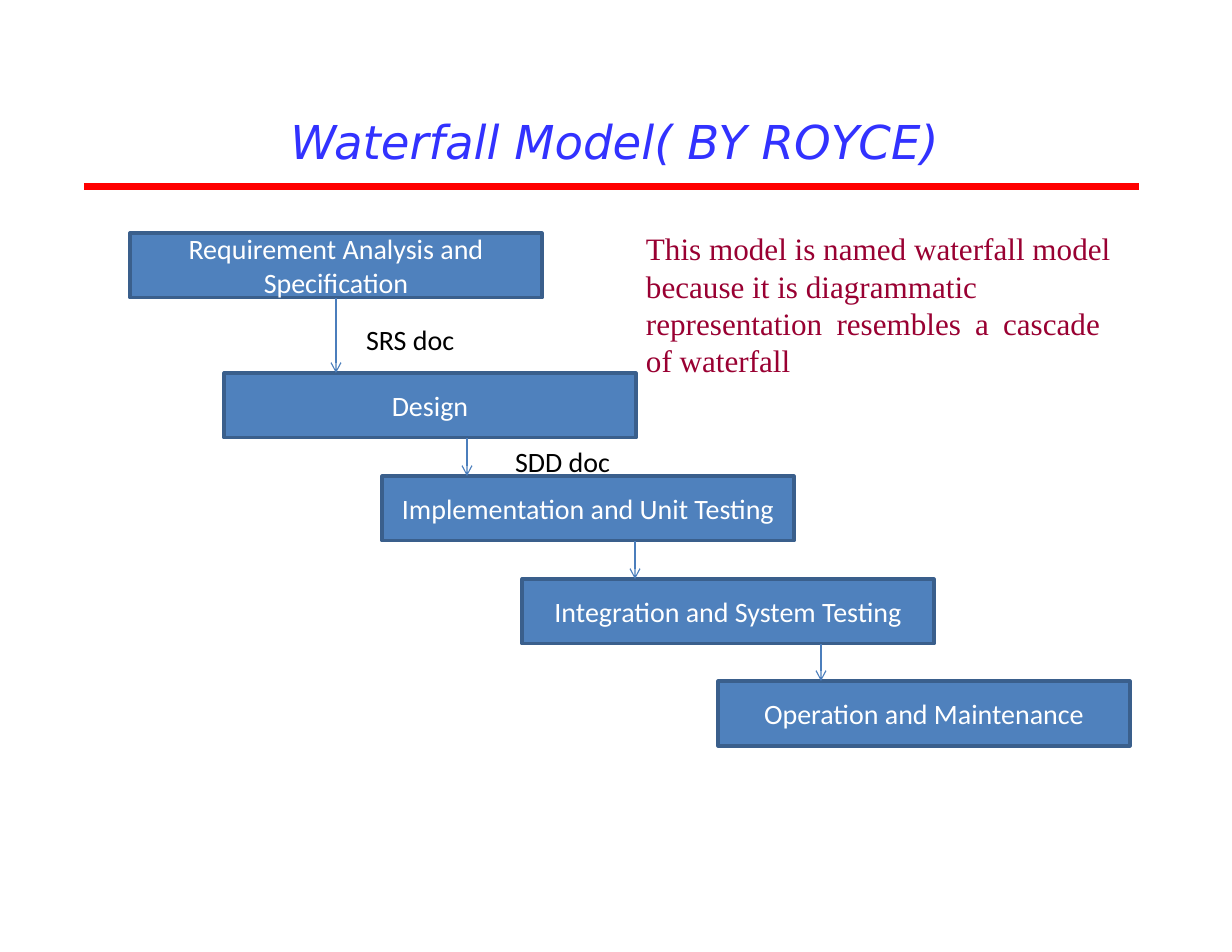
from lxml import etree
from pptx import Presentation, util as u
from pptx.dml.color import RGBColor
from pptx.enum import shapes, text
from pptx.oxml import ns

PX = 914400 // 112
COLORS = {"title": "3232FF", "rule": "FF0000", "box": "4F81BD", "edge": "3A5F8C",
          "arrow": "4B7EBC", "white": "FFFFFF", "black": "000000", "note": "990032"}
STAGE_WIDTH, STAGE_HEIGHT = 412, 65
STAGES = [("Requirement Analysis and Specification", 130, 233),
          ("Design", 224, 373),
          ("Implementation and Unit Testing", 382, 476),
          ("Integration and System Testing", 522, 579),
          ("Operation and Maintenance", 718, 681)]
ARROW_LEFTS = [336, 467, 635, 821]


def px(*lengths):
    return [u.Emu(length * PX) for length in lengths]


def color(name):
    return RGBColor.from_string(COLORS[name])


def format_span(span, size, font, name):
    span.font.size = u.Pt(size)
    span.font.name = font
    span.font.color.rgb = color(name)


def add_text(page, words, place, size, font, name):
    box = page.shapes.add_textbox(*px(*place))
    box.text_frame.word_wrap = True
    box.text_frame.text = words
    para = box.text_frame.paragraphs[0]
    format_span(para.runs[0], size, font, name)
    return box


def add_stage(page, words, left, top):
    box = page.shapes.add_shape(shapes.MSO_SHAPE.RECTANGLE,
                                *px(left, top, STAGE_WIDTH, STAGE_HEIGHT))
    box.shadow.inherit = False
    box.fill.solid()
    box.fill.fore_color.rgb = color("box")
    box.line.color.rgb = color("edge")
    box.line.width = u.Pt(2)
    frame = box.text_frame
    frame.word_wrap = True
    frame.vertical_anchor = text.MSO_ANCHOR.MIDDLE
    frame.text = words
    frame.paragraphs[0].alignment = text.PP_ALIGN.CENTER
    format_span(frame.paragraphs[0].runs[0], 18, "Calibri", "white")
    return box


def add_line(page, start, end, name, width, arrow=False):
    line = page.shapes.add_connector(shapes.MSO_CONNECTOR.STRAIGHT, *px(*start, *end))
    line.line.color.rgb = color(name)
    line.line.width = u.Pt(width)
    if arrow:
        etree.SubElement(line.line._get_or_add_ln(), ns.qn("a:tailEnd"), type="arrow")
    etree.SubElement(line._element.spPr, ns.qn("a:effectLst"))
    return line


def add_note(page):
    box = add_text(page, "This model is named waterfall model because it is "
                   "diagrammatic representation", (635, 224, 495, 196),
                   20, "Times New Roman", "note")
    para = box.text_frame.paragraphs[0]
    para.line_spacing = u.Pt(24)
    # The gaps between the words of the third line are widened
    for word in ("resembles", "a", "cascade"):
        for words, spacing in ((" ", 400), (word, 0)):
            span = para.add_run()
            span.text = words
            format_span(span, 20, "Times New Roman", "note")
            span.font._element.set("spc", str(spacing))
    para.add_line_break()
    span = para.add_run()
    span.text = "of waterfall"
    format_span(span, 20, "Times New Roman", "note")


def main():
    deck = Presentation()
    deck.slide_width, deck.slide_height = px(11 * 112, 952)
    page = deck.slides.add_slide(deck.slide_layouts[6])

    # Title and rule
    title = add_text(page, "Waterfall Model( BY ROYCE)", (265, 113, 700, 56),
                     30, "DejaVu Sans", "title")
    frame = title.text_frame
    frame.margin_left = frame.margin_right = frame.margin_top = frame.margin_bottom = 0
    frame.paragraphs[0].alignment = text.PP_ALIGN.CENTER
    frame.paragraphs[0].runs[0].font.italic = True
    add_line(page, (84, 187), (1139, 187), "rule", 4.5)

    # Stages, and the arrows that lead down from each to the next
    boxes = [add_stage(page, *stage) for stage in STAGES]
    tops = [top for _, _, top in STAGES]
    arrows = [add_line(page, (left, top + STAGE_HEIGHT), (left, below), "arrow", 0.75, True)
              for left, top, below in zip(ARROW_LEFTS, tops, tops[1:])]
    arrows[0].begin_connect(boxes[0], 2)

    # Documents handed on, and the note
    add_text(page, "SRS doc", (355, 317, 140, 45), 18, "Calibri", "black")
    add_text(page, "SDD doc", (504, 439, 196, 45), 18, "Calibri", "black")
    add_note(page)

    deck.save("out.pptx")


if __name__ == "__main__":
    main()
